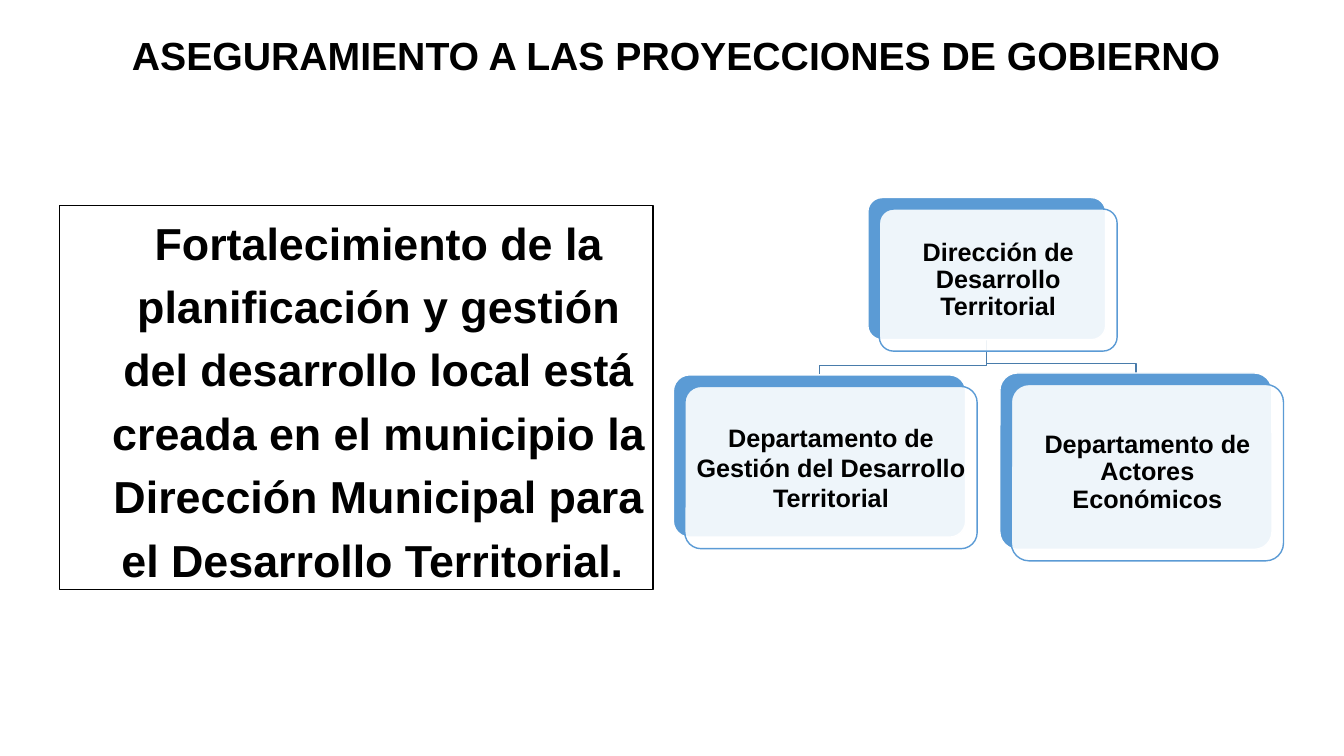
from lxml import etree
from pptx import Presentation
from pptx.dml.color import RGBColor
from pptx.enum.shapes import MSO_SHAPE as Shape
from pptx.enum.text import MSO_ANCHOR as Anchor, MSO_AUTO_SIZE as AutoSize, PP_ALIGN as Align
from pptx.oxml.ns import qn
from pptx.util import Pt

BLACK = RGBColor(0x00, 0x00, 0x00)
WHITE = RGBColor(0xFF, 0xFF, 0xFF)
BLUE = RGBColor(0x5B, 0x9B, 0xD5)
LINK_BLUE = RGBColor(0x49, 0x7C, 0xAB)

CARD_OFFSET = 8.2  # shift of the front card from the blue one
ELBOW_RISE = 6.5   # height of the link's bend above a department


def write(shape, text, size, spacing, anchor, inset):
    frame = shape.text_frame
    frame.text = text
    frame.word_wrap = True
    frame.vertical_anchor = anchor
    frame.margin_left = frame.margin_right = Pt(inset)
    frame.margin_top = frame.margin_bottom = Pt(inset)
    paragraph = frame.paragraphs[0]
    paragraph.alignment = Align.CENTER
    paragraph.line_spacing = spacing
    font = paragraph.runs[0].font
    font.name, font.size, font.bold = "Arial", Pt(size), True
    font.color.rgb = BLACK
    return paragraph


def add_card(left, top, width, height, fill, line):
    card = slide.shapes.add_shape(
        Shape.ROUNDED_RECTANGLE, Pt(left), Pt(top), Pt(width), Pt(height))
    card.adjustments[0] = 0.1
    card.shadow.inherit = False
    card.fill.solid()
    card.fill.fore_color.rgb = fill
    card.line.color.rgb = line
    card.line.width = Pt(1)
    return card


presentation = Presentation()
presentation.slide_width, presentation.slide_height = Pt(960), Pt(540)
slide = presentation.slides.add_slide(presentation.slide_layouts[5])

# Title
title = slide.shapes.title
title.left, title.top, title.width, title.height = Pt(2.9), Pt(2.9), Pt(960), Pt(77)
write(title, "ASEGURAMIENTO A LAS PROYECCIONES DE GOBIERNO", 28, 0.9, Anchor.MIDDLE, 5)

# Framed statement
statement = slide.shapes.add_shape(
    Shape.RECTANGLE, Pt(42.5), Pt(146.9), Pt(424), Pt(274.3))
statement.shadow.inherit = False
statement.fill.background()
statement.line.color.rgb = BLACK
statement.line.width = Pt(0.75)
paragraph = write(
    statement,
    "Fortalecimiento de la planificación y gestión del desarrollo local está "
    "creada en el municipio la Dirección Municipal para el Desarrollo Territorial. ",
    32, 1.18, Anchor.TOP, 0)
paragraph._p.get_or_add_pPr().set("marL", str(Pt(32.4)))
statement.text_frame.auto_size = AutoSize.SHAPE_TO_FIT_TEXT

# Organisation chart: text, left, top, width, height, line spacing
units = [
    ("Dirección de Desarrollo Territorial", 619.9, 141.1, 169.9, 101.5, 0.9),
    ("Departamento de Gestión del Desarrollo Territorial", 481, 267.8, 208.8, 115.9, 1.0),
    ("Departamento de Actores Económicos", 714.2, 266.4, 194.4, 126, 0.9),
]
head, *departments = units
head_middle = head[1] + head[3] / 2
head_bottom = head[2] + head[4]

# Links from the head to each department
for _, left, top, width, _, _ in reversed(departments):
    middle, bend = left + width / 2, top - ELBOW_RISE
    builder = slide.shapes.build_freeform(Pt(head_middle), Pt(head_bottom))
    builder.add_line_segments(
        [(Pt(head_middle), Pt(bend)), (Pt(middle), Pt(bend)), (Pt(middle), Pt(top))],
        close=False)
    link = builder.convert_to_shape()
    link.shadow.inherit = False
    link.fill.background()
    link.line.color.rgb = LINK_BLUE
    link.line.width = Pt(1)

# Blue cards with translucent white cards in front
for text, left, top, width, height, spacing in units:
    add_card(left, top, width, height, BLUE, WHITE)
    front = add_card(left + CARD_OFFSET, top + CARD_OFFSET, width, height, WHITE, BLUE)
    colour = front.fill._xPr.find(qn("a:solidFill"))[0]
    etree.SubElement(colour, qn("a:alpha"), val="90000")
    write(front, text, 18, spacing, Anchor.MIDDLE, 5)

presentation.save("out.pptx")
